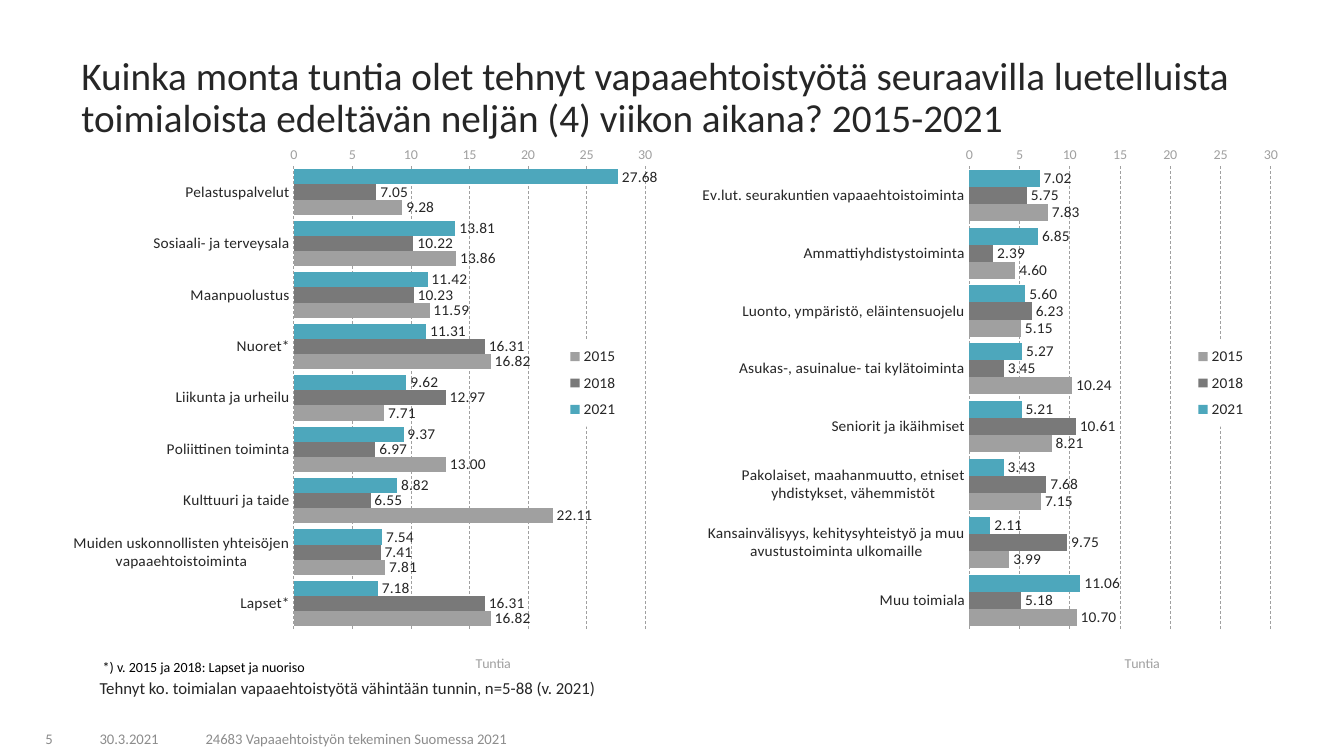
from dataclasses import dataclass
from typing import Optional

from lxml.etree import _Element as Element
from pptx import Presentation
from pptx.chart.chart import Chart
from pptx.chart.data import CategoryChartData
from pptx.dml.color import RGBColor
from pptx.enum.chart import XL_AXIS_CROSSES as Crosses
from pptx.enum.chart import XL_CHART_TYPE as ChartType
from pptx.enum.chart import XL_LABEL_POSITION as LabelPosition
from pptx.enum.chart import XL_LEGEND_POSITION as LegendPosition
from pptx.enum.chart import XL_TICK_MARK as TickMark
from pptx.enum.dml import MSO_LINE_DASH_STYLE as Dash
from pptx.enum.text import MSO_ANCHOR as Anchor
from pptx.enum.text import PP_ALIGN as Align
from pptx.oxml import parse_xml
from pptx.oxml.ns import nsdecls, qn
from pptx.slide import Slide
from pptx.util import Cm, Pt

FONT = "Calibri"
BLACK = RGBColor(0x00, 0x00, 0x00)
INK = RGBColor(0x26, 0x26, 0x26)
FOOTER_GREY = RGBColor(0x8C, 0x8C, 0x8C)
LIGHT_GREY = RGBColor(0xA0, 0xA0, 0xA0)
DARK_GREY = RGBColor(0x79, 0x79, 0x79)
TEAL = RGBColor(0x4D, 0xA7, 0xBC)

YEAR_COLOURS = {"2021": TEAL, "2018": DARK_GREY, "2015": LIGHT_GREY}
CHART_TOP, CHART_WIDTH, CHART_HEIGHT = 3.71, 15.11, 13.31
FOOTER_TOP, FOOTER_HEIGHT = 18.19, 0.76


@dataclass(frozen=True)
class Label:
    """A text box; lengths in centimetres, size in points."""
    text: str
    left: float
    top: float
    width: float
    height: float
    size: float
    colour: RGBColor = INK
    align: Align = Align.LEFT
    anchor: Anchor = Anchor.TOP
    line_spacing: Optional[float] = None
    wrap: bool = True


@dataclass(frozen=True)
class HoursChart:
    """Hours per field; each row holds 2021, 2018 and 2015. Offsets are shares of the chart."""
    left: float
    plot_x: float
    plot_width: float
    legend_x: float
    axis_title_x: float
    rows: dict[str, tuple[float, float, float]]


LABELS = [
    Label("Kuinka monta tuntia olet tehnyt vapaaehtoistyötä seuraavilla luetelluista "
          "toimialoista edeltävän neljän (4) viikon aikana? 2015-2021",
          1.8, 1.63, 30.66, 1.73, 28, anchor=Anchor.MIDDLE, line_spacing=0.9),
    Label("Tehnyt ko. toimialan vapaaehtoistyötä vähintään tunnin, n=5-88 (v. 2021)",
          2.26, 17.02, 13.26, 0.71, 12, line_spacing=0.9),
    Label("*) v. 2015 ja 2018: Lapset ja nuoriso",
          2.34, 16.46, 5.79, 0.69, 10, BLACK, wrap=False),
    Label("5", 0.08, FOOTER_TOP, 1.5, FOOTER_HEIGHT, 10.5, FOOTER_GREY,
          Align.RIGHT, Anchor.BOTTOM),
    Label("30.3.2021", 1.68, FOOTER_TOP, 3.15, FOOTER_HEIGHT, 10.5, FOOTER_GREY,
          Align.CENTER, Anchor.BOTTOM),
    Label("24683 Vapaaehtoistyön tekeminen Suomessa 2021",
          4.93, FOOTER_TOP, 15.04, FOOTER_HEIGHT, 10.5, FOOTER_GREY, anchor=Anchor.BOTTOM),
]

CHARTS = [
    HoursChart(1.8, 0.371, 0.586, 0.82, 0.67, {
        "Pelastuspalvelut": (27.68, 7.05, 9.28),
        "Sosiaali- ja terveysala": (13.81, 10.22, 13.86),
        "Maanpuolustus": (11.42, 10.23, 11.59),
        "Nuoret*": (11.31, 16.31, 16.82),
        "Liikunta ja urheilu": (9.62, 12.97, 7.71),
        "Poliittinen toiminta": (9.37, 6.97, 13),
        "Kulttuuri ja taide": (8.82, 6.55, 22.11),
        "Muiden uskonnollisten yhteisöjen vapaaehtoistoiminta": (7.54, 7.41, 7.81),
        "Lapset*": (7.18, 16.31, 16.82),
    }),
    HoursChart(17.4, 0.465, 0.503, 0.835, 0.72, {
        "Ev.lut. seurakuntien vapaaehtoistoiminta": (7.02, 5.75, 7.83),
        "Ammattiyhdistystoiminta": (6.85, 2.39, 4.6),
        "Luonto, ympäristö, eläintensuojelu": (5.6, 6.23, 5.15),
        "Asukas-, asuinalue- tai kylätoiminta": (5.27, 3.45, 10.24),
        "Seniorit ja ikäihmiset": (5.21, 10.61, 8.21),
        "Pakolaiset, maahanmuutto, etniset yhdistykset, vähemmistöt": (3.43, 7.68, 7.15),
        "Kansainvälisyys, kehitysyhteistyö ja muu avustustoiminta ulkomaille":
            (2.11, 9.75, 3.99),
        "Muu toimiala": (11.06, 5.18, 10.7),
    }),
]


def apply(target: object, **values: object) -> None:
    """Set several attributes of one object."""
    for name, value in values.items():
        setattr(target, name, value)


def style_font(font: object, size: float, colour: RGBColor) -> None:
    apply(font, name=FONT, size=Pt(size), bold=False)
    font.color.rgb = colour


def add_label(page: Slide, label: Label) -> None:
    box = page.shapes.add_textbox(Cm(label.left), Cm(label.top),
                                  Cm(label.width), Cm(label.height))
    apply(box.text_frame, word_wrap=label.wrap, vertical_anchor=label.anchor)
    para = box.text_frame.paragraphs[0]
    apply(para, alignment=label.align, line_spacing=label.line_spacing)
    span = para.add_run()
    span.text = label.text
    style_font(span.font, label.size, label.colour)


def place(part: Element, index: int, inner: bool = False, **shares: float) -> None:
    """Give a chart part a manual layout as its child number index."""
    for old in part.findall(qn("c:layout")):
        part.remove(old)
    target = '<c:layoutTarget val="inner"/>' if inner else ""
    modes = "".join(f'<c:{key}Mode val="edge"/>' for key in ("x", "y"))
    sizes = "".join(f'<c:{key} val="{share}"/>' for key, share in shares.items())
    part.insert(index, parse_xml(
        f'<c:layout {nsdecls("c")}><c:manualLayout>{target}{modes}{sizes}'
        '</c:manualLayout></c:layout>'))


def style_axes(chart: Chart, title_x: float) -> None:
    fields, hours = chart.category_axis, chart.value_axis
    for axis, size, colour in ((fields, 11, INK), (hours, 10, LIGHT_GREY)):
        apply(axis, major_tick_mark=TickMark.NONE, minor_tick_mark=TickMark.NONE)
        axis.format.line.fill.background()
        style_font(axis.tick_labels.font, size, colour)
    apply(fields, reverse_order=True, crosses=Crosses.MAXIMUM, has_major_gridlines=False)
    apply(hours, minimum_scale=0, maximum_scale=30, major_unit=5, has_major_gridlines=True)
    apply(hours.tick_labels, number_format="General", number_format_is_linked=False)
    grid = hours.major_gridlines.format.line
    grid.color.rgb = LIGHT_GREY
    apply(grid, width=Pt(0.5), dash_style=Dash.DASH)
    title = hours.axis_title
    title.text_frame.text = "Tuntia"
    style_font(title.text_frame.paragraphs[0].runs[0].font, 10, LIGHT_GREY)
    place(title._element, 1, x=title_x, y=0.96)


def style_legend(chart: Chart, left: float) -> None:
    chart.has_legend = True
    legend = chart.legend
    apply(legend, position=LegendPosition.RIGHT, include_in_layout=False)
    style_font(legend.font, 11, INK)
    place(legend._element, 1, x=left, y=0.35, w=0.1, h=0.17)
    legend._element.find(qn("c:txPr")).addprevious(parse_xml(
        f'<c:spPr {nsdecls("c", "a")}><a:solidFill><a:srgbClr val="FFFFFF"/>'
        '</a:solidFill></c:spPr>'))


def add_hours_chart(page: Slide, item: HoursChart) -> None:
    data = CategoryChartData(number_format="#,##0.00")
    data.categories = list(item.rows)
    for year, values in zip(YEAR_COLOURS, zip(*item.rows.values())):
        data.add_series(year, values)
    chart = page.shapes.add_chart(
        ChartType.BAR_CLUSTERED, Cm(item.left), Cm(CHART_TOP),
        Cm(CHART_WIDTH), Cm(CHART_HEIGHT), data).chart
    chart.has_title = False
    style_font(chart.font, 12, BLACK)
    plot = chart.plots[0]
    apply(plot, gap_width=40, overlap=0, vary_by_categories=False)
    for series in plot.series:
        series.format.fill.solid()
        series.format.fill.fore_color.rgb = YEAR_COLOURS[series.name]
        labels = series.data_labels
        apply(labels, show_value=True, position=LabelPosition.OUTSIDE_END,
              number_format="#,##0.00", number_format_is_linked=False)
        style_font(labels.font, 11, INK)
    style_axes(chart, item.axis_title_x)
    style_legend(chart, item.legend_x)
    place(chart._chartSpace.chart.plotArea, 0, inner=True,
          x=item.plot_x, y=0.012, w=item.plot_width, h=0.904)


def main() -> None:
    deck = Presentation()
    apply(deck, slide_width=Cm(33.87), slide_height=Cm(19.05))
    page = deck.slides.add_slide(deck.slide_layouts[6])
    for item in CHARTS:
        add_hours_chart(page, item)
    for label in LABELS:
        add_label(page, label)
    deck.save("out.pptx")


if __name__ == "__main__":
    main()
